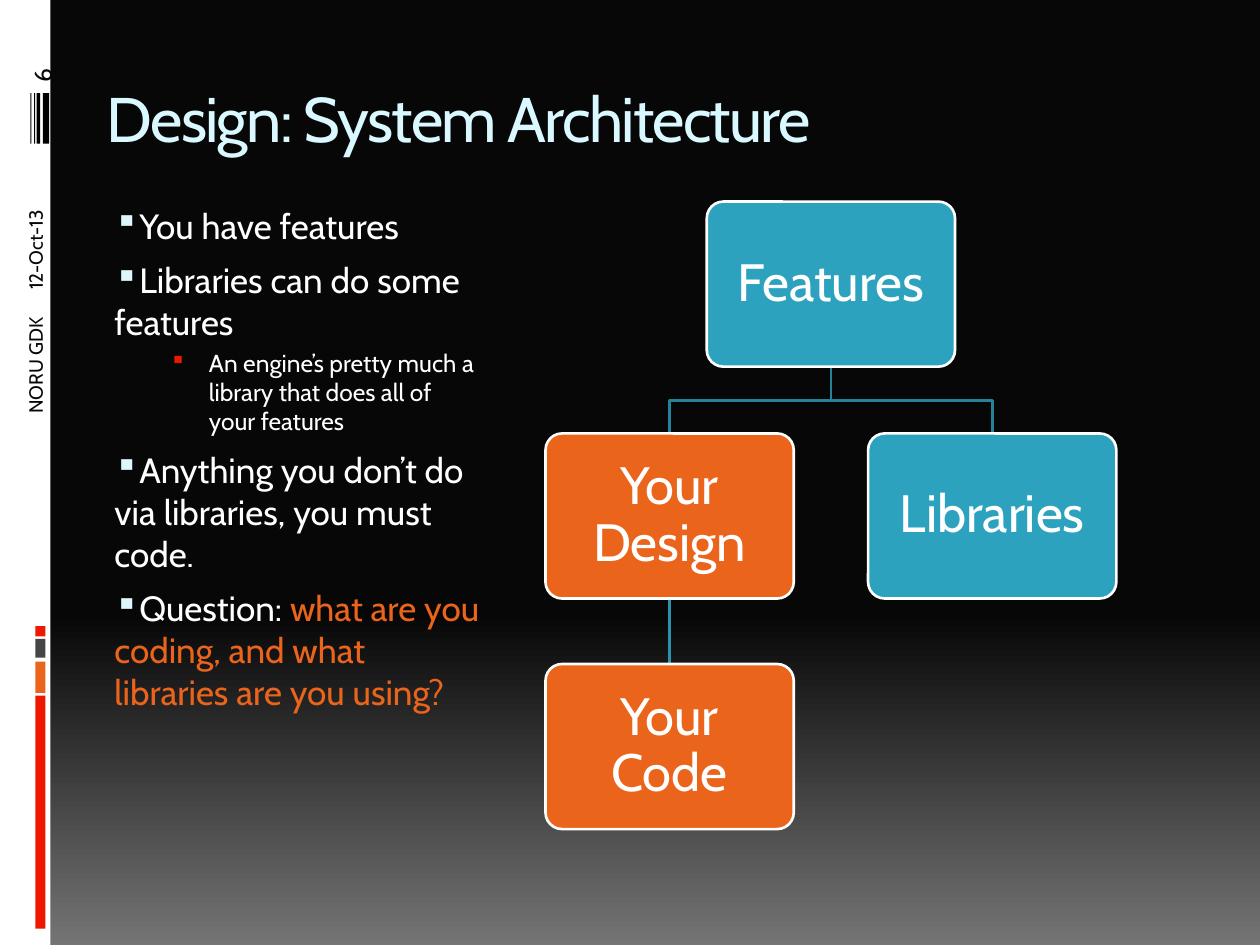
"""Build the system architecture slide with its bullet list and design tree."""
from typing import NamedTuple, Optional

from lxml.etree import SubElement
from pptx import Presentation
from pptx.dml.color import RGBColor
from pptx.enum.shapes import MSO_CONNECTOR as Connector, MSO_SHAPE as Shape
from pptx.enum.text import MSO_ANCHOR as Anchor, PP_ALIGN as Align
from pptx.oxml.ns import qn
from pptx.util import Inches, Pt

FONT = "Cabin"
WHITE = RGBColor(0xFF, 0xFF, 0xFF)
BLACK = RGBColor(0x00, 0x00, 0x00)
INK = RGBColor(0x07, 0x07, 0x07)
GRAY = RGBColor(0x74, 0x74, 0x74)
CHARCOAL = RGBColor(0x46, 0x46, 0x46)
RED = RGBColor(0xEE, 0x17, 0x00)
ORANGE = RGBColor(0xEB, 0x64, 0x1B)
TEAL = RGBColor(0x2D, 0xA2, 0xBF)
DARK_TEAL = RGBColor(0x24, 0x82, 0x99)
MID_TEAL = RGBColor(0x29, 0x93, 0xAD)
PALE_BLUE = RGBColor(0xD9, 0xF8, 0xFF)
BULLET_BLUE = RGBColor(0xDE, 0xF5, 0xFA)

NODE_WIDTH, NODE_HEIGHT = 1.97, 1.31
ROW_TOPS = [1.6, 3.44, 5.27]


class Bar(NamedTuple):
    left: float
    top: float
    width: float
    height: float
    color: RGBColor


class SideLabel(NamedTuple):
    text: str
    top: float
    width: float
    height: float
    size: int
    align: Align


class Level(NamedTuple):
    margin: float
    indent: float
    before: int
    size: int
    bullet_color: RGBColor
    bullet_percent: int


class Point(NamedTuple):
    text: str
    level: Level
    accent: str = ""


class Node(NamedTuple):
    text: str
    left: float
    row: int
    color: RGBColor

    @property
    def top(self) -> float:
        return ROW_TOPS[self.row]

    @property
    def center(self) -> float:
        return self.left + NODE_WIDTH / 2

    @property
    def bottom(self) -> float:
        return self.top + NODE_HEIGHT


BARS = [
    Bar(0, 0, 0.4, 7.5, WHITE),
    Bar(0.28, 5.52, 0.08, 1.85, RED),
    Bar(0.28, 5.25, 0.08, 0.25, ORANGE),
    Bar(0.28, 5.07, 0.08, 0.15, CHARCOAL),
    Bar(0.28, 4.97, 0.08, 0.08, RED),
] + [
    Bar(left, 0.74, width, 0.4, BLACK)
    for left, width in [(0.34, 0.05), (0.29, 0.03), (0.27, 0.01), (0.24, 0.01)]
]
SIDE_LABELS = [
    SideLabel("12-Oct-13", 1.17, 0.42, 1.23, 11, Align.LEFT),
    SideLabel("NORU GDK", 2.42, 0.42, 2.48, 11, Align.RIGHT),
    SideLabel("6", 0, 0.5, 0.75, 14, Align.LEFT),
]
MAIN = Level(0.06, 0, 7, 20, BULLET_BLUE, 95)
SUB = Level(0.81, -0.31, 3, 14, RED, 90)
POINTS = [
    Point("You have features", MAIN),
    Point("Libraries can do some features", MAIN),
    Point("An engine’s pretty much a library that does all of your features", SUB),
    Point("Anything you don’t do via libraries, you must code.", MAIN),
    Point("Question: ", MAIN, "what are you coding, and what libraries are you using?"),
]
FEATURES = Node("Features", 5.61, 0, TEAL)
DESIGN = Node("Your Design", 4.33, 1, ORANGE)
LIBRARIES = Node("Libraries", 6.89, 1, TEAL)
CODE = Node("Your Code", 4.33, 2, ORANGE)


def style_span(span, size: int, color: RGBColor) -> None:
    span.font.name = FONT
    span.font.size = Pt(size)
    span.font.color.rgb = color


def add_text(page, text: str, left: float, top: float, width: float, height: float,
             size: int, color: RGBColor, anchor: Anchor, align: Align = Align.LEFT):
    box = page.shapes.add_textbox(Inches(left), Inches(top), Inches(width), Inches(height))
    frame = box.text_frame
    frame.word_wrap = True
    frame.vertical_anchor = anchor
    frame.text = text
    para = frame.paragraphs[0]
    para.alignment = align
    style_span(para.runs[0], size, color)
    return frame


def add_block(page, kind: Shape, left: float, top: float, width: float, height: float,
              color: RGBColor):
    block = page.shapes.add_shape(kind, Inches(left), Inches(top), Inches(width), Inches(height))
    block.shadow.inherit = False
    block.fill.solid()
    block.fill.fore_color.rgb = color
    block.line.fill.background()
    return block


def add_side_label(page, label: SideLabel) -> None:
    frame = add_text(page, label.text, 0, label.top, label.width, label.height,
                     label.size, INK, Anchor.BOTTOM, label.align)
    frame._txBody.bodyPr.set("vert", "vert270")


def set_bullet(para, level: Level) -> None:
    para.space_before = Pt(level.before)
    props = para._p.get_or_add_pPr()
    props.set("marL", str(Inches(level.margin)))
    props.set("indent", str(Inches(level.indent)))
    color = SubElement(props, qn("a:buClr"))
    SubElement(color, qn("a:srgbClr"), val=str(level.bullet_color))
    SubElement(props, qn("a:buSzPct"), val=str(level.bullet_percent * 1000))
    SubElement(props, qn("a:buChar"), char="▪")


def add_points(page, points: list[Point]) -> None:
    box = page.shapes.add_textbox(Inches(0.75), Inches(1.57), Inches(3.17), Inches(5))
    frame = box.text_frame
    frame.word_wrap = True
    frame.text = "\n".join(point.text for point in points)
    for para, point in zip(frame.paragraphs, points):
        set_bullet(para, point.level)
        style_span(para.runs[0], point.level.size, WHITE)
        if point.accent:
            span = para.add_run()
            span.text = point.accent
            style_span(span, point.level.size, ORANGE)


def add_node(page, node: Node) -> None:
    block = add_block(page, Shape.ROUNDED_RECTANGLE, node.left, node.top,
                      NODE_WIDTH, NODE_HEIGHT, node.color)
    block.adjustments[0] = 0.1
    block.line.color.rgb = WHITE
    block.line.width = Pt(1.5)
    frame = block.text_frame
    frame.margin_left = frame.margin_right = Inches(0.16)
    frame.margin_top = frame.margin_bottom = Inches(0.16)
    frame.word_wrap = True
    frame.vertical_anchor = Anchor.MIDDLE
    frame.text = node.text
    para = frame.paragraphs[0]
    para.alignment = Align.CENTER
    para.line_spacing = 0.9
    style_span(para.runs[0], 30, WHITE)


def add_link(page, parent: Node, child: Node, color: RGBColor,
             bend: Optional[float] = None) -> None:
    start = Inches(parent.center), Inches(parent.bottom)
    end = Inches(child.center), Inches(child.top)
    if bend is None:
        link = page.shapes.add_connector(Connector.STRAIGHT, *start, *end)
        SubElement(link._element.spPr, qn("a:effectLst"))
    else:
        builder = page.shapes.build_freeform(*start)
        corners = [(start[0], Inches(bend)), (end[0], Inches(bend)), end]
        builder.add_line_segments(corners, close=False)
        link = builder.convert_to_shape()
        link.shadow.inherit = False
        link.fill.background()
    link.line.color.rgb = color
    link.line.width = Pt(1.5)


def main() -> None:
    deck = Presentation()
    deck.slide_width, deck.slide_height = Inches(10), Inches(7.5)
    page = deck.slides.add_slide(deck.slide_layouts[6])
    backdrop = page.background.fill
    backdrop.gradient()
    backdrop.gradient_angle = 270
    for stop, position, color in zip(backdrop.gradient_stops, (0.65, 1), (INK, GRAY)):
        stop.position = position
        stop.color.rgb = color
    for bar in BARS:
        add_block(page, Shape.RECTANGLE, *bar)
    title = add_text(page, "Design: System Architecture", 0.75, 0.3, 9, 1.27,
                     36, PALE_BLUE, Anchor.MIDDLE)
    title.paragraphs[0].runs[0].font._element.set("spc", "-100")
    add_points(page, POINTS)
    for label in SIDE_LABELS:
        add_side_label(page, label)
    for child in (DESIGN, LIBRARIES):
        add_link(page, FEATURES, child, DARK_TEAL, bend=3.18)
    add_link(page, DESIGN, CODE, MID_TEAL)
    for node in (FEATURES, DESIGN, LIBRARIES, CODE):
        add_node(page, node)
    deck.save("out.pptx")


if __name__ == "__main__":
    main()
